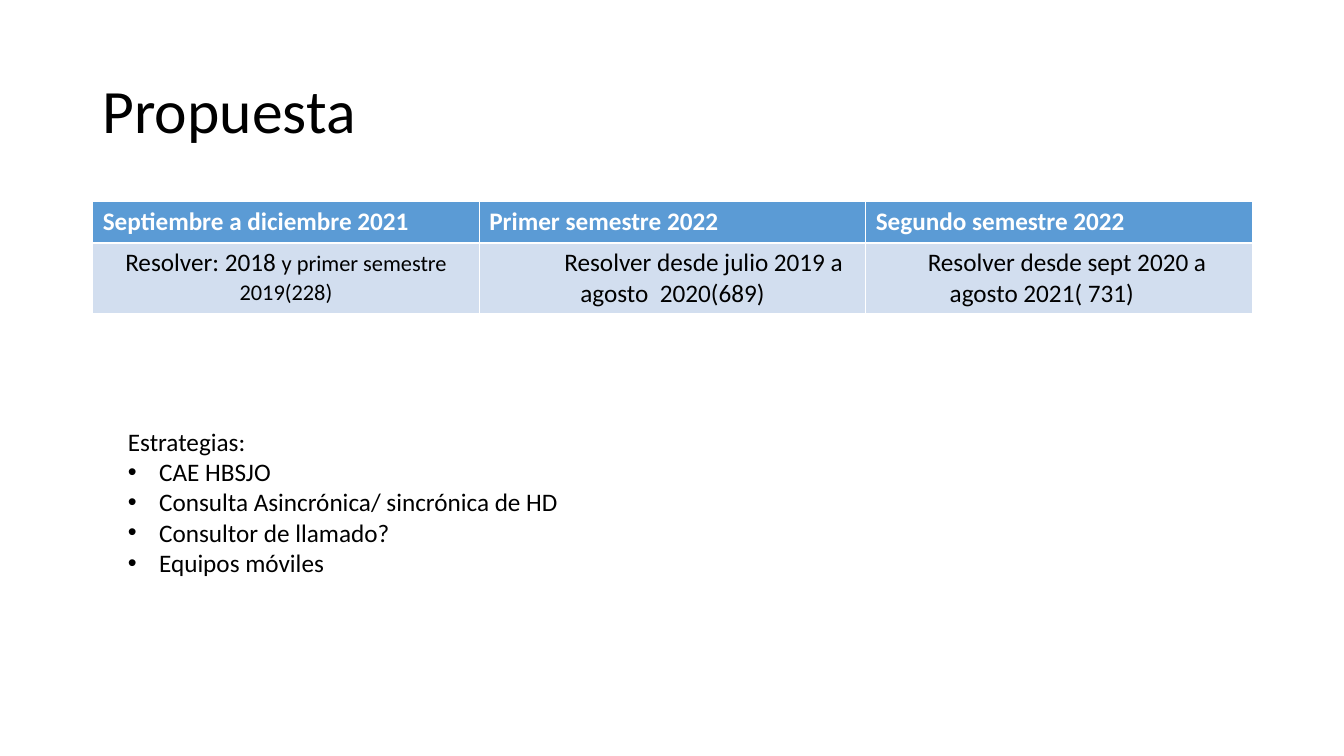
from pptx import Presentation
from pptx.dml.color import RGBColor
from pptx.enum.text import MSO_ANCHOR, PP_ALIGN
from pptx.util import Inches, Pt
from lxml.etree import SubElement

FONT = "Calibri"
BLACK, WHITE, BLUE, PALE = "000000", "FFFFFF", "5B9BD5", "D2DEEF"
WIDE, HIGH = 13.33, 7.5
LEFT, SPAN = 0.92, 11.5
ROWS = 0.41, 0.7
TITLE = "Propuesta"
TERMS = [
    ("Septiembre a diciembre 2021",
     [("Resolver: 2018 ", 18), ("y primer semestre 2019(228)", 16)], 0, 0.1),
    ("Primer semestre 2022",
     [("Resolver desde julio 2019 a agosto  2020(689)", 18)], 0.62, 0.1),
    ("Segundo semestre 2022",
     [("Resolver desde sept 2020 a agosto 2021( 731)", 18)], 0.5, 0.44),
]
HEAD = "Estrategias:"
PLANS = ["CAE HBSJO", "Consulta Asincrónica/ sincrónica de HD",
         "Consultor de llamado?", "Equipos móviles"]


def color(code):
    return RGBColor.from_string(code)


def style(font, size, code=BLACK, bold=False):
    font.name, font.size, font.bold = FONT, Pt(size), bold
    font.color.rgb = color(code)


def indent(para, first, left=0):
    props = para._p.get_or_add_pPr()
    props.set("marL", str(Inches(left)))
    props.set("indent", str(Inches(first)))
    return props


def bullet(para):
    props = indent(para, -0.31, 0.31)
    space = props.nsmap["a"]
    SubElement(props, f"{{{space}}}buFont", typeface="Arial")
    SubElement(props, f"{{{space}}}buChar", char="•")


def box(slide, *place):
    frame = slide.shapes.add_textbox(*map(Inches, place)).text_frame
    frame.word_wrap = True
    return frame


def paint(cell, code):
    cell.fill.solid()
    cell.fill.fore_color.rgb = color(code)
    return cell.text_frame.paragraphs[0]


def main():
    deck = Presentation()
    deck.slide_width, deck.slide_height = Inches(WIDE), Inches(HIGH)
    slide = deck.slides.add_slide(deck.slide_layouts[6])

    frame = box(slide, LEFT, 0.4, SPAN, 1.45)
    frame.vertical_anchor = MSO_ANCHOR.MIDDLE
    para = frame.paragraphs[0]
    para.text, para.line_spacing = TITLE, 0.9
    style(para.font, 44)

    place = map(Inches, (LEFT, 2, SPAN, sum(ROWS)))
    table = slide.shapes.add_table(len(ROWS), len(TERMS), *place).table
    for row, tall in zip(table.rows, ROWS):
        row.height = Inches(tall)
    for col, (term, parts, first, right) in enumerate(TERMS):
        para = paint(table.cell(0, col), BLUE)
        para.text = term
        style(para.font, 18, WHITE, True)
        cell = table.cell(1, col)
        cell.margin_right = Inches(right)
        para = paint(cell, PALE)
        para.alignment = PP_ALIGN.CENTER
        indent(para, first)
        for text, size in parts:
            run = para.add_run()
            run.text = text
            style(run.font, size)

    frame = box(slide, 1.17, 4.18, 5.88, 1.62)
    frame.text = "\n".join([HEAD, *PLANS])
    for para in frame.paragraphs:
        style(para.font, 18)
    for para in frame.paragraphs[1:]:
        bullet(para)

    deck.save("out.pptx")


if __name__ == "__main__":
    main()
